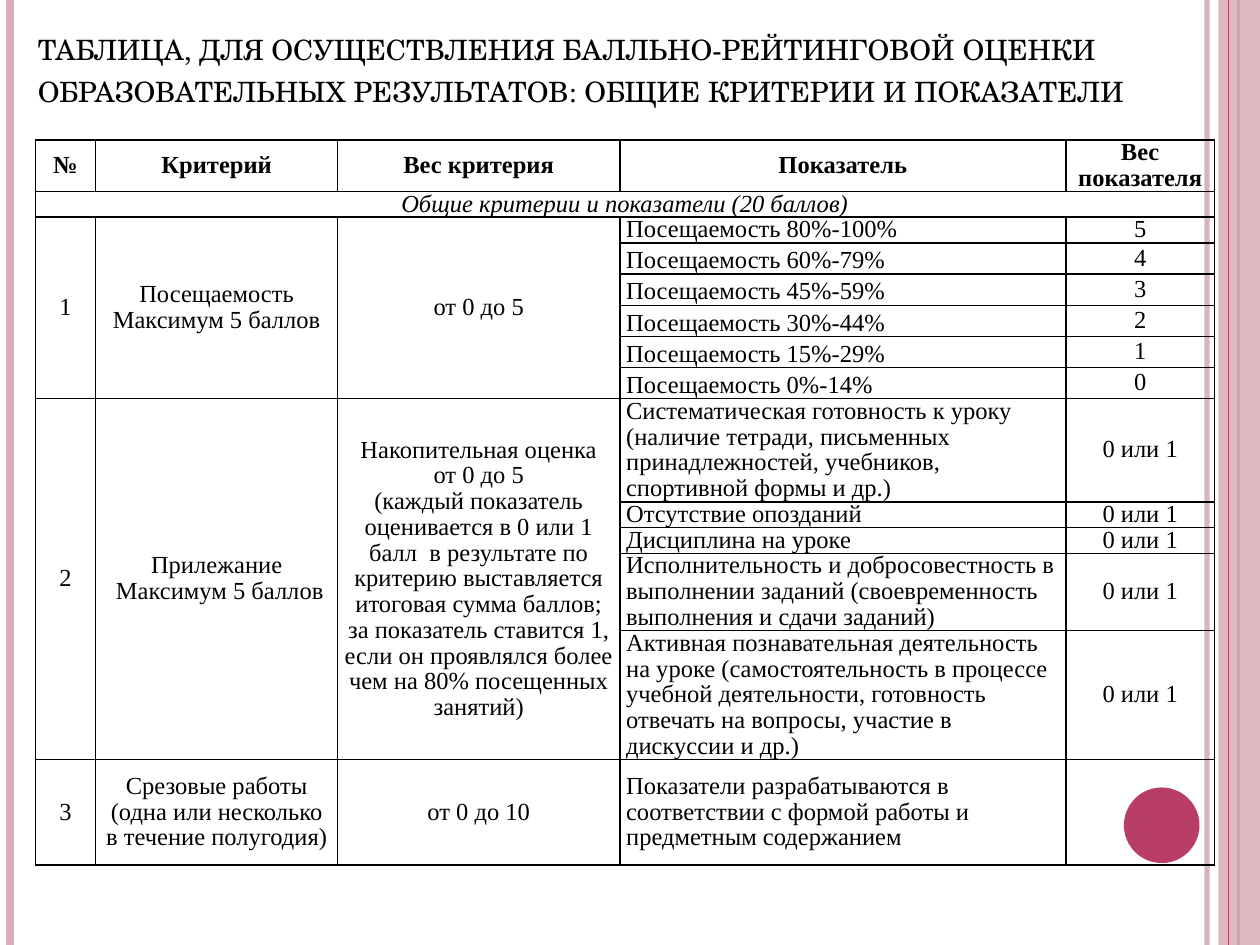
from dataclasses import dataclass

from lxml.etree import SubElement
from pptx import Presentation
from pptx.dml.color import RGBColor
from pptx.enum.shapes import MSO_CONNECTOR, MSO_SHAPE
from pptx.enum.text import MSO_ANCHOR, MSO_AUTO_SIZE, PP_ALIGN
from pptx.oxml import parse_xml
from pptx.oxml.ns import nsdecls, qn
from pptx.util import Inches, Pt


@dataclass(frozen=True)
class Theme:
    """Colours, fonts and type sizes of the slide."""
    black: str = "000000"
    rose: str = "B83D68"
    pale: str = "D8AFB9"
    title_font: str = "TeX Gyre Schola"
    body_font: str = "Times New Roman"
    title_size: int = 20
    body_size: int = 14


THEME = Theme()
TITLE = ("таблица, для осуществления балльно-рейтинговой оценки "
         "образовательных результатов: общие критерии и показатели")
STRIPES = [(9.58, THEME.pale, 3, 93), (0.08, THEME.pale, 4.5, 100), (9.83, THEME.rose, 1.5, 100)]
INNER_STRIPE = (9.75, THEME.rose, 0.75, 100)

COLS = [0.48, 1.92, 2.24, 3.54, 1.18]
ROWS = [0.36, 0.12, 0.12] + [0.15] * 5 + [0.6, 0.12, 0.12, 0.6, 0.84, 0.84]
HEADER = ["№", "Критерий", "Вес критерия", "Показатель", "Вес показателя"]
SECTION = "Общие критерии и показатели (20 баллов)"
ATTENDANCE = ["80%-100%", "60%-79%", "45%-59%", "30%-44%", "15%-29%", "0%-14%"]
DILIGENCE = [
    "Систематическая готовность к уроку (наличие тетради, письменных "
    "принадлежностей, учебников, спортивной формы и др.)",
    "Отсутствие опозданий",
    "Дисциплина на уроке",
    "Исполнительность и добросовестность в выполнении заданий "
    "(своевременность выполнения и сдачи заданий)",
    "Активная познавательная деятельность на уроке (самостоятельность в процессе "
    "учебной деятельности, готовность отвечать на вопросы, участие в дискуссии и др.)",
]
CRITERIA = [
    ("Посещаемость\nМаксимум 5 баллов", "от 0 до 5",
     [(f"Посещаемость {share}", str(5 - i)) for i, share in enumerate(ATTENDANCE)]),
    ("Прилежание\n Максимум 5 баллов",
     "Накопительная оценка\nот 0 до 5\n(каждый показатель оценивается в 0 или 1 балл  "
     "в результате по критерию выставляется итоговая сумма баллов; за показатель "
     "ставится 1, если он проявлялся более чем на 80% посещенных занятий)",
     [(text, "0 или 1") for text in DILIGENCE]),
    ("Срезовые работы\n(одна или несколько в течение полугодия)", "от 0 до 10",
     [("Показатели разрабатываются в соответствии с формой работы "
       "и предметным содержанием", "")]),
]


def set_alpha(props, percent):
    """Make the solid colour inside the given properties translucent."""
    color = next(props.iter(qn("a:srgbClr")))
    SubElement(color, qn("a:alpha")).set("val", str(percent * 1000))


def add_stripe(slide, x, color, width, alpha):
    """Draw a vertical line over the full slide height."""
    line = slide.shapes.add_connector(
        MSO_CONNECTOR.STRAIGHT, Inches(x), 0, Inches(x), Inches(7.5))
    line.line.color.rgb = RGBColor.from_string(color)
    line.line.width = Pt(width)
    props = line.element.spPr
    if alpha < 100:
        set_alpha(props, alpha)
    SubElement(props, qn("a:effectLst"))


def add_block(slide, kind, box, color, alpha=100):
    """Add a filled preset shape without outline."""
    sp = slide.shapes.add_shape(kind, *map(Inches, box))
    sp.shadow.inherit = False
    sp.fill.solid()
    sp.fill.fore_color.rgb = RGBColor.from_string(color)
    sp.line.fill.background()
    if alpha < 100:
        set_alpha(sp.element.spPr, alpha)


def style_font(font, name, size, bold=False, italic=False):
    """Apply black type of the given face and size."""
    font.name, font.size = name, Pt(size)
    font.bold, font.italic = bold, italic
    font.color.rgb = RGBColor.from_string(THEME.black)


def set_title(slide):
    """Place and format the title in small capitals."""
    title = slide.shapes.title
    slide.shapes.element.append(title.element)
    title.left, title.top, title.width, title.height = map(Inches, (0.2, 0.21, 9.07, 0.71))
    tf = title.text_frame
    tf.text = TITLE
    tf.auto_size = MSO_AUTO_SIZE.NONE
    tf.vertical_anchor = MSO_ANCHOR.BOTTOM
    p = tf.paragraphs[0]
    p.alignment = PP_ALIGN.LEFT
    style_font(p.runs[0].font, THEME.title_font, THEME.title_size)
    p.runs[0].font._element.set("cap", "small")


def outline_cell(cell):
    """Leave a cell unfilled and give it thin black borders."""
    cell.fill.background()
    props = cell._tc.get_or_add_tcPr()
    for i, side in enumerate("LRTB"):
        props.insert(i, parse_xml(
            f'<a:ln{side} {nsdecls("a")} w="{Pt(1)}"><a:solidFill>'
            f'<a:srgbClr val="{THEME.black}"/></a:solidFill></a:ln{side}>'))


def fill_cell(cell, text, align=PP_ALIGN.CENTER, spacing=0.95,
              anchor=MSO_ANCHOR.MIDDLE, **style):
    """Write text into a cell with tight margins."""
    cell.margin_left = cell.margin_right = Inches(0.05)
    cell.margin_top = cell.margin_bottom = 0
    cell.vertical_anchor = anchor
    cell.text_frame.text = text
    for p in cell.text_frame.paragraphs:
        p.alignment, p.line_spacing = align, spacing
        for r in p.runs:
            style_font(r.font, THEME.body_font, THEME.body_size, **style)


def add_criterion(table, top, number, name, weight, indicators):
    """Fill the rows of one criterion and return the next free row."""
    end = top + len(indicators)
    for col, text in enumerate((str(number), name, weight)):
        if end - top > 1:
            table.cell(top, col).merge(table.cell(end - 1, col))
        fill_cell(table.cell(top, col), text)
    for row, (indicator, points) in enumerate(indicators, top):
        loose = number == 1 and row > top
        fill_cell(table.cell(row, 3), indicator, PP_ALIGN.LEFT, 1.15 if loose else 0.95,
                  MSO_ANCHOR.TOP if loose else MSO_ANCHOR.MIDDLE)
        if points:
            fill_cell(table.cell(row, 4), points)
    return end


def add_criteria_table(slide):
    """Build the table of criteria and indicators."""
    frame = slide.shapes.add_table(
        len(ROWS), len(COLS), *map(Inches, (0.28, 1.11, 9.37, 6.09)))
    table = frame.table
    table.first_row = table.horz_banding = False
    for column, width in zip(table.columns, COLS):
        column.width = Inches(width)
    for row, height in zip(table.rows, ROWS):
        row.height = Inches(height)
    frame.height = Inches(6.09)
    for cell in table.iter_cells():
        outline_cell(cell)
    for col, text in enumerate(HEADER):
        fill_cell(table.cell(0, col), text, bold=True)
    table.cell(1, 0).merge(table.cell(1, len(COLS) - 1))
    fill_cell(table.cell(1, 0), SECTION, italic=True)
    top = 2
    for number, criterion in enumerate(CRITERIA, 1):
        top = add_criterion(table, top, number, *criterion)


def main():
    """Build and save the slide."""
    prs = Presentation()
    prs.slide_width, prs.slide_height = Inches(10), Inches(7.5)
    slide = prs.slides.add_slide(prs.slide_layouts[5])
    for stripe in STRIPES:
        add_stripe(slide, *stripe)
    add_block(slide, MSO_SHAPE.RECTANGLE, (9.67, 0, 0.33, 7.5), THEME.pale, 87)
    add_stripe(slide, *INNER_STRIPE)
    add_block(slide, MSO_SHAPE.OVAL, (8.92, 6.25, 0.6, 0.6), THEME.rose)
    set_title(slide)
    add_criteria_table(slide)
    prs.save("out.pptx")


if __name__ == "__main__":
    main()
